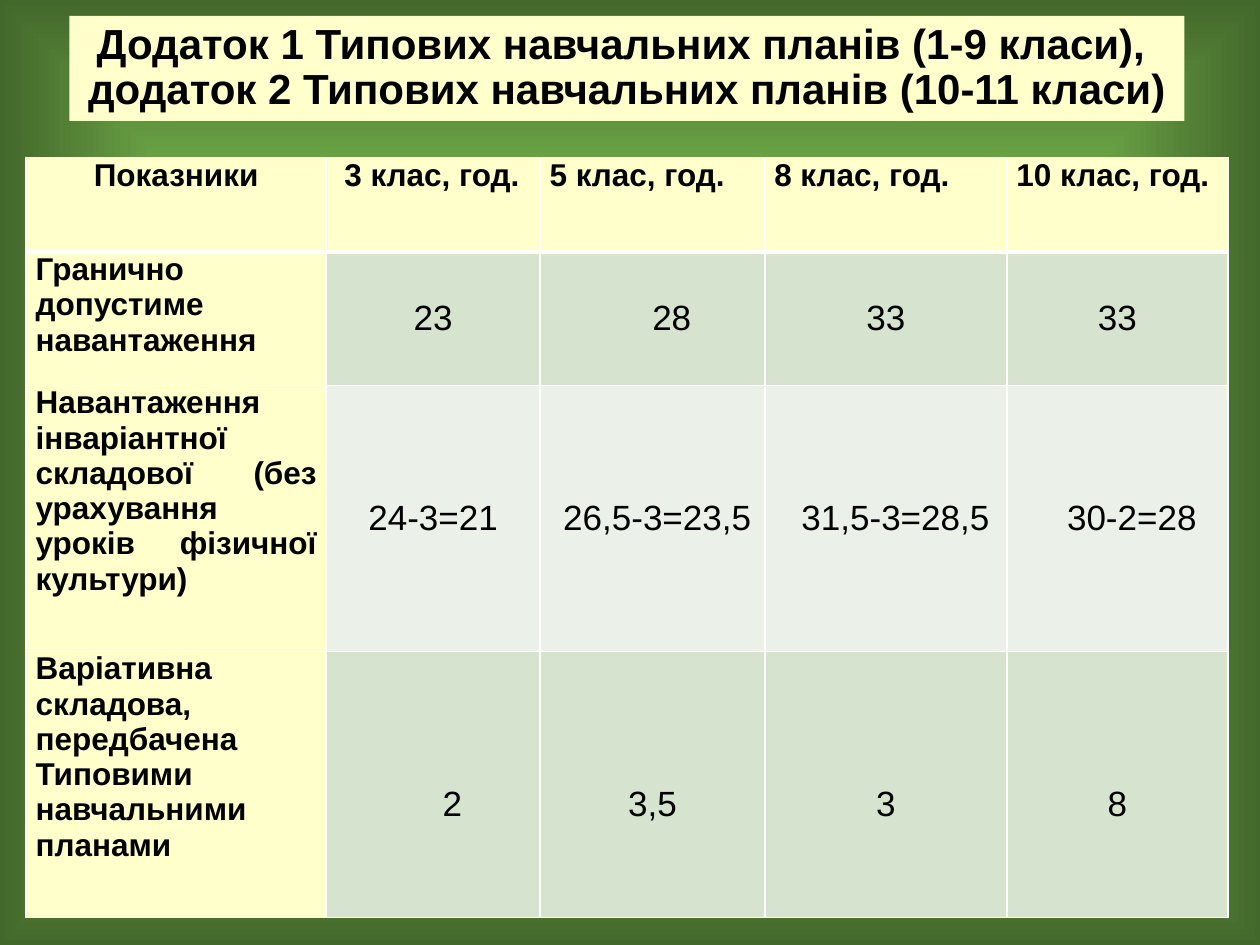
from lxml import etree
from pptx import Presentation
from pptx.dml.color import RGBColor
from pptx.enum.text import MSO_ANCHOR as Anchor, MSO_AUTO_SIZE as AutoSize, PP_ALIGN as Align
from pptx.oxml import parse_xml
from pptx.oxml.ns import qn
from pptx.util import Pt

COLORS = {
    "cream": "FFFFCC", "band_dark": "D5E3CF", "band_light": "EBF1E9",
    "border": "FFFFFF", "text": "000000",
    "center": "C5E0B4", "middle": "76B54C", "edge": "43682B",
}
LABEL_FONT = {"name": "Arial", "size": Pt(18), "bold": True}
VALUE_FONT = {"name": "Arial", "size": Pt(20), "bold": False}
TITLE_FONT = {"name": "Arial", "size": Pt(24), "bold": True}

TITLE = "Додаток 1 Типових навчальних планів (1-9 класи), \vдодаток 2 Типових навчальних планів (10-11 класи)"
ROWS = [
    ["Показники", "3 клас, год.", "5 клас, год.", "8 клас, год.", "10 клас, год."],
    ["Гранично допустиме навантаження", "23", "28", "33", "33"],
    ["Навантаження інваріантної складової (без урахування уроків фізичної культури)",
     "24-3=21", "26,5-3=23,5", "31,5-3=28,5", "30-2=28"],
    ["Варіативна складова, передбачена Типовими навчальними планами", "2", "3,5", "3", "8"],
]
COLUMN_WIDTHS = [171.4, 122.3, 128.4, 138.4, 126.2]
ROW_HEIGHTS = [54, 76.2, 152, 152]
INDENTS = {(0, 1): 5, (1, 2): 22, (2, 2): 5.5, (2, 3): 11, (2, 4): 16.5, (3, 1): 22}
LAST_ROW_DROP = 23


def set_format(target, values):
    for name, value in values.items():
        setattr(target, name, value)


def paint(fill, color):
    fill.solid()
    fill.fore_color.rgb = RGBColor.from_string(COLORS[color])


def style_runs(paragraph, font_values):
    for run in paragraph.runs:
        set_format(run.font, font_values)
        run.font.color.rgb = RGBColor.from_string(COLORS["text"])


def add_background(slide):
    """Gradient that darkens from the slide centre to its edges."""
    stops = "".join(
        f'<a:gs pos="{pos * 1000}"><a:srgbClr val="{COLORS[color]}"/></a:gs>'
        for pos, color in [(0, "center"), (55, "middle"), (100, "edge")])
    fill = slide.background.fill
    fill.solid()
    properties = slide.element.cSld.bg.bgPr
    solid = properties.find(qn("a:solidFill"))
    properties.replace(solid, parse_xml(
        '<a:gradFill xmlns:a="http://schemas.openxmlformats.org/drawingml/2006/main" rotWithShape="1">'
        f'<a:gsLst>{stops}</a:gsLst><a:path path="shape">'
        '<a:fillToRect l="50000" t="50000" r="50000" b="50000"/></a:path></a:gradFill>'))


def add_title(slide, left, top, width, height):
    title = slide.shapes.title
    set_format(title, {"left": Pt(left), "top": Pt(top), "width": Pt(width), "height": Pt(height)})
    paint(title.fill, "cream")
    frame = title.text_frame
    frame.text = TITLE
    set_format(frame, {"word_wrap": False, "auto_size": AutoSize.SHAPE_TO_FIT_TEXT,
                       "vertical_anchor": Anchor.MIDDLE})
    paragraph = frame.paragraphs[0]
    set_format(paragraph, {"alignment": Align.CENTER, "line_spacing": 0.9})
    style_runs(paragraph, TITLE_FONT)


def add_borders(cell, widths):
    properties = cell._tc.get_or_add_tcPr()
    for side, width in widths.items():
        line = etree.SubElement(properties, qn(f"a:ln{side}"), w=str(Pt(width)))
        solid = etree.SubElement(line, qn("a:solidFill"))
        etree.SubElement(solid, qn("a:srgbClr"), val=COLORS["border"])


def fill_cell(cell, row, column, text):
    is_header, is_label = row == 0, row == 0 or column == 0
    add_borders(cell, {"L": 1, "R": 1, "T": 3 if row == 1 else 1, "B": 3 if is_header else 1})
    paint(cell.fill, "cream" if is_label else "band_dark" if row % 2 else "band_light")
    drop = LAST_ROW_DROP if row == len(ROWS) - 1 and not is_label else 0
    set_format(cell, {
        "margin_left": Pt(5.4), "margin_right": Pt(5.4), "margin_top": Pt(drop), "margin_bottom": 0,
        "vertical_anchor": Anchor.TOP if is_label else Anchor.MIDDLE, "text": text})
    paragraph = cell.text_frame.paragraphs[0]
    justified = is_label and (row, column) != (0, 0)
    paragraph.alignment = Align.JUSTIFY if justified else Align.CENTER
    if (row, column) in INDENTS:
        paragraph._p.get_or_add_pPr().set("marL", str(Pt(INDENTS[row, column])))
    style_runs(paragraph, LABEL_FONT if is_label else VALUE_FONT)


def add_hours_table(slide, left, top):
    table = slide.shapes.add_table(
        len(ROWS), len(COLUMN_WIDTHS), Pt(left), Pt(top),
        Pt(sum(COLUMN_WIDTHS)), Pt(sum(ROW_HEIGHTS))).table
    for column, width in zip(table.columns, COLUMN_WIDTHS):
        column.width = Pt(width)
    for index, (height, texts) in enumerate(zip(ROW_HEIGHTS, ROWS)):
        table.rows[index].height = Pt(height)
        for column, text in enumerate(texts):
            fill_cell(table.cell(index, column), index, column, text)


def main():
    deck = Presentation()
    set_format(deck, {"slide_width": Pt(720), "slide_height": Pt(540)})
    slide = deck.slides.add_slide(deck.slide_layouts[5])
    add_background(slide)
    add_hours_table(slide, 15, 90)
    add_title(slide, 39.6, 9.2, 637.2, 59.6)
    deck.save("out.pptx")


if __name__ == "__main__":
    main()
